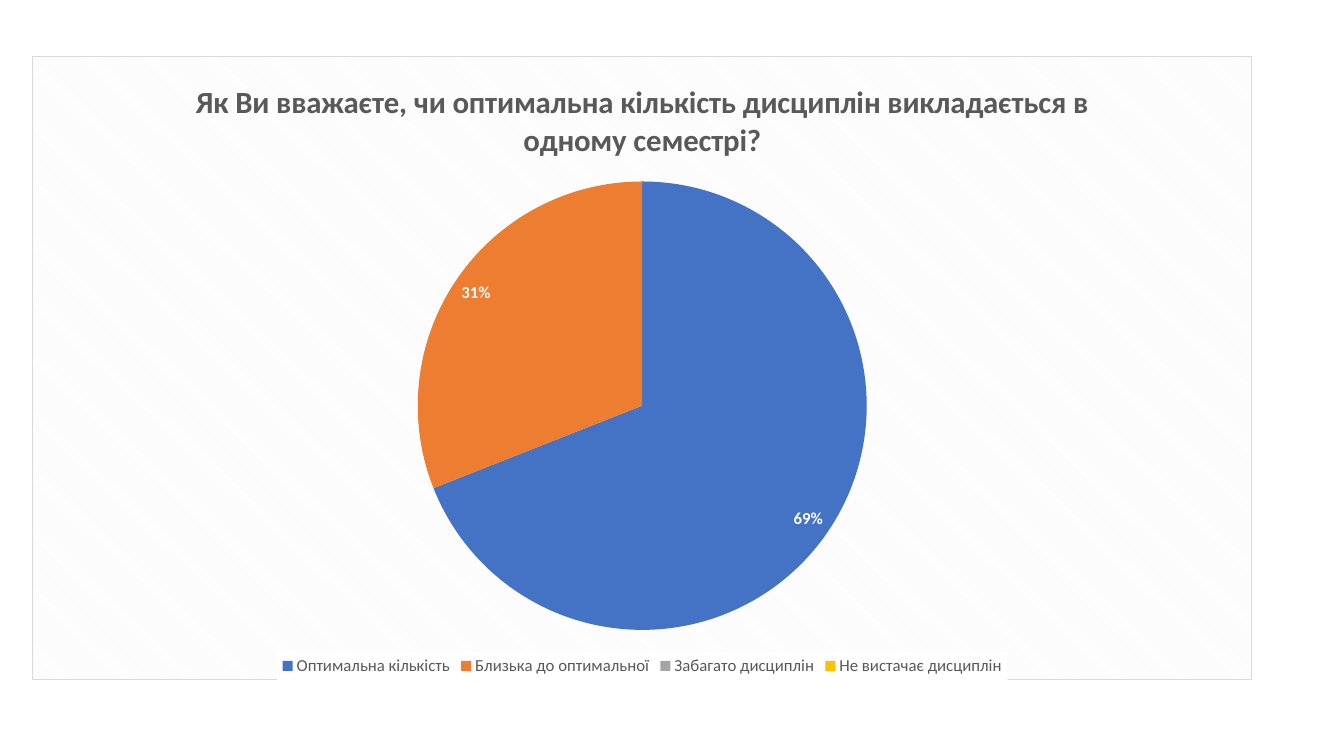
import pptx
import pptx.chart.data
import pptx.dml.color
import pptx.enum.chart
import pptx.oxml
import pptx.oxml.ns
import pptx.util

SLIDE_WIDTH, SLIDE_HEIGHT = 13.33, 7.5
FONT = "Calibri"
GREY = "595959"
QUESTION = "Як Ви вважаєте, чи оптимальна кількість дисциплін викладається в одному семестрі?"
# Answer, percentage, slice colour
ANSWERS = [
    ("Оптимальна кількість", 69, "4472C4"),
    ("Близька до оптимальної", 31, "ED7D31"),
    ("Забагато дисциплін", 0, "A5A5A5"),
    ("Не вистачає дисциплін", 0, "FFC000"),
]


def color(hex_code):
    return pptx.dml.color.RGBColor.from_string(hex_code)


def style_font(font, size, hex_code, bold=False):
    font.name = FONT
    font.size = pptx.util.Pt(size)
    font.bold = bold
    font.color.rgb = color(hex_code)


def chart_xml(tag, content):
    """Parse a chart element with the usual namespaces."""
    names = pptx.oxml.ns.nsdecls("c", "a")
    return pptx.oxml.parse_xml(f"<c:{tag} {names}>{content}</c:{tag}>")


def solid(hex_code):
    return f'<a:solidFill><a:srgbClr val="{hex_code}"/></a:solidFill>'


def add_pie(page, left, top, width, height):
    data = pptx.chart.data.CategoryChartData()
    data.categories = [answer for answer, _, _ in ANSWERS]
    data.add_series(QUESTION, [share for _, share, _ in ANSWERS])
    frame = page.shapes.add_chart(
        pptx.enum.chart.XL_CHART_TYPE.PIE,
        pptx.util.Inches(left * SLIDE_WIDTH), pptx.util.Inches(top * SLIDE_HEIGHT),
        pptx.util.Inches(width * SLIDE_WIDTH), pptx.util.Inches(height * SLIDE_HEIGHT),
        data)
    chart = frame.chart
    style_font(chart.font, 10, "000000")
    return chart


def add_title(chart):
    chart.has_title = True
    para = chart.chart_title.text_frame.paragraphs[0]
    span = para.add_run()
    span.text = QUESTION
    style_font(span.font, 22, GREY, bold=True)
    chart.chart_title.include_in_layout = False


def add_legend(chart):
    chart.has_legend = True
    legend = chart.legend
    legend.position = pptx.enum.chart.XL_LEGEND_POSITION.BOTTOM
    legend.include_in_layout = False
    style_font(legend.font, 12, GREY)
    text_style = chart.element.xpath(".//c:legend/c:txPr")[0]
    text_style.addprevious(chart_xml("spPr", solid("FFFFFF")))


def style_slices(chart):
    plot = chart.plots[0]
    plot.vary_by_categories = True
    series = plot.series[0]
    labels = series.data_labels
    labels.show_percentage = True
    labels.show_value = False
    labels.number_format = "0%"
    labels.number_format_is_linked = False
    labels.position = pptx.enum.chart.XL_LABEL_POSITION.INSIDE_END
    style_font(labels.font, 12, "FFFFFF", bold=True)
    label_list = chart.element.xpath(".//c:ser/c:dLbls")[0]
    hidden = 0
    for index, (_, share, hex_code) in enumerate(ANSWERS):
        fill = series.points[index].format.fill
        fill.solid()
        fill.fore_color.rgb = color(hex_code)
        # Empty answers carry no label
        if share == 0:
            label = chart_xml("dLbl", f'<c:idx val="{index}"/><c:delete val="1"/>')
            label_list.insert(hidden, label)
            hidden += 1


def place_pie(chart, top, width, height):
    """Centre the pie across the chart; lengths are shares of the chart."""
    sides = {"x": (1 - width) / 2, "y": top, "w": width, "h": height}
    modes = '<c:layoutTarget val="inner"/><c:xMode val="edge"/><c:yMode val="edge"/>'
    values = "".join(f'<c:{side} val="{value}"/>' for side, value in sides.items())
    area = chart.element.xpath(".//c:plotArea")[0]
    for layout in area.xpath("./c:layout"):
        area.remove(layout)
    area.insert(0, chart_xml("layout", f"<c:manualLayout>{modes}{values}</c:manualLayout>"))


def style_background(chart):
    pattern = ('<a:pattFill prst="dkDnDiag"><a:fgClr><a:srgbClr val="F2F2F2"/></a:fgClr>'
               '<a:bgClr><a:srgbClr val="FFFFFF"/></a:bgClr></a:pattFill>')
    border = f'<a:ln w="{pptx.util.Pt(0.75)}">{solid("D9D9D9")}</a:ln>'
    chart.element.xpath("./c:chart")[0].addnext(chart_xml("spPr", pattern + border))


def main():
    deck = pptx.Presentation()
    deck.slide_width = pptx.util.Inches(SLIDE_WIDTH)
    deck.slide_height = pptx.util.Inches(SLIDE_HEIGHT)
    page = deck.slides.add_slide(deck.slide_layouts[6])

    # Survey pie with its question and answers
    chart = add_pie(page, 0.32 / SLIDE_WIDTH, 0.56 / SLIDE_HEIGHT,
                    12.1 / SLIDE_WIDTH, 6.19 / SLIDE_HEIGHT)
    add_title(chart)
    add_legend(chart)
    style_slices(chart)
    place_pie(chart, top=0.2, width=0.37, height=0.72)
    style_background(chart)

    deck.save("out.pptx")


if __name__ == "__main__":
    main()
